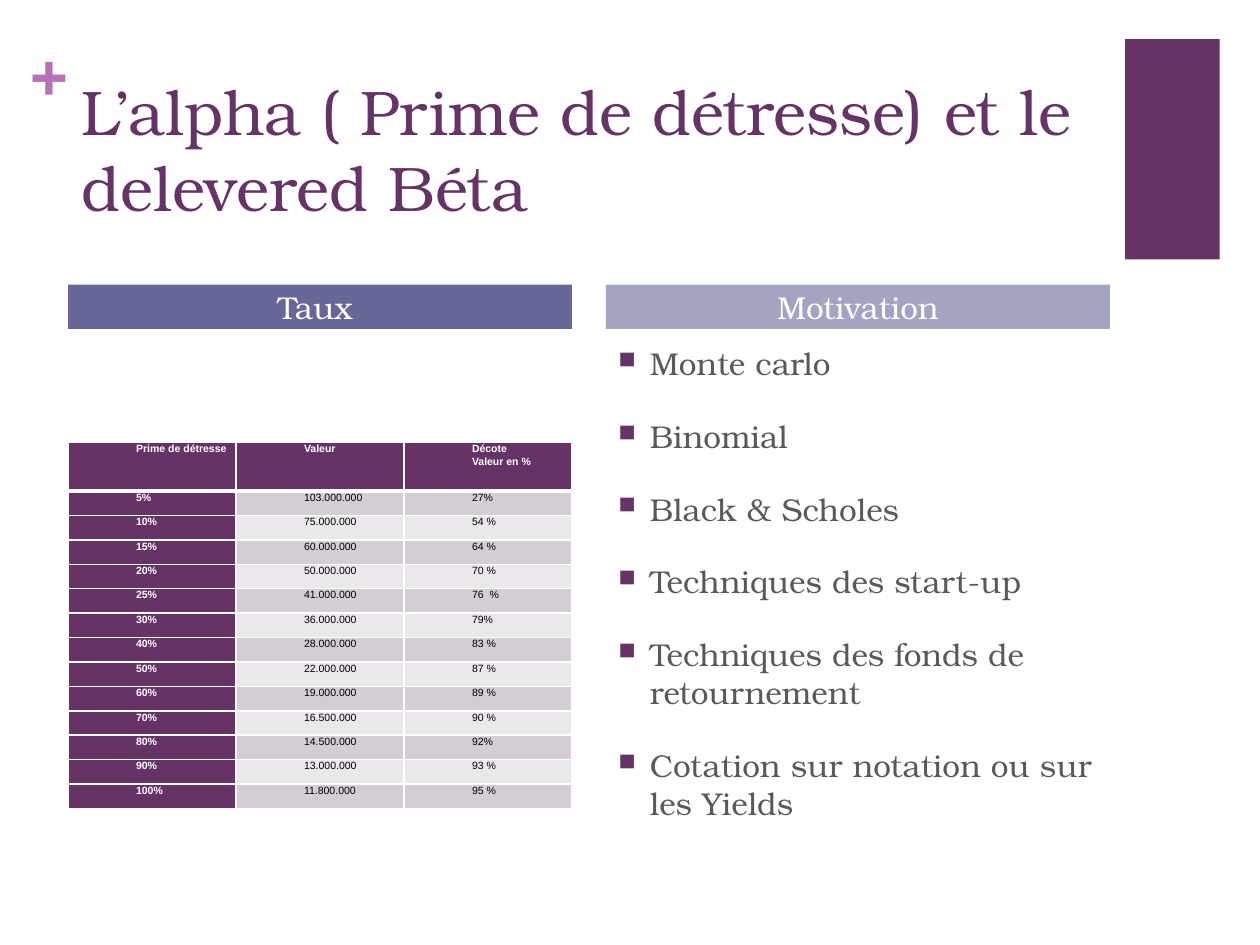
"""Build a slide that sets a table of distress premiums beside a list of valuation methods."""
from lxml.etree import SubElement
from pptx import Presentation
from pptx.dml.color import RGBColor
from pptx.enum.shapes import MSO_SHAPE
from pptx.enum.text import MSO_ANCHOR, PP_ALIGN
from pptx.oxml.ns import qn
from pptx.util import Inches, Pt

TITLE = "L’alpha ( Prime de détresse) et le delevered Béta"
HEADS = [("Taux ", "666699"), ("Motivation", "A3A3C2")]
METHODS = [
    "Monte carlo", "Binomial", "Black & Scholes", "Techniques des start-up",
    "Techniques des fonds de retournement",
    "Cotation sur notation ou sur les Yields",
]
RATES = [
    ("Prime de détresse", "Valeur", "Décote\nValeur en %"),
    ("5%", "103.000.000", "27%"),
    ("10%", "75.000.000", "54 %"),
    ("15%", "60.000.000", "64 %"),
    ("20%", "50.000.000", "70 %"),
    ("25%", "41.000.000", "76  %"),
    ("30%", "36.000.000", "79%"),
    ("40%", "28.000.000", "83 %"),
    ("50%", "22.000.000", "87 %"),
    ("60%", "19.000.000", "89 %"),
    ("70%", "16.500.000", "90 %"),
    ("80%", "14.500.000", "92%"),
    ("90%", "13.000.000", "93 %"),
    ("100%", "11.800.000", "95 %"),
]
PLUM, WHITE, BANDS = "663366", "FFFFFF", ("EAE8EA", "D3CED3")
SERIF, SANS = "TeX Gyre Bonum", "Arial"
LEFT, WIDE, GAP = 0.54, 4, 0.27
COLS = [LEFT + i * (WIDE + GAP) for i in range(2)]
HEAD_TOP, HEAD_HIGH = 2.26, 0.35
BODY_TOP, BODY_HIGH = 2.68, 4.02
TABLE_TOP, TABLE_HIGH = 3.51, 2.91


def tint(code):
    return RGBColor.from_string(code)


def write(frame, text, size=18, color=WHITE, font=SERIF, bold=False, align=PP_ALIGN.LEFT,
          before=0, line=None, indent=0, bullet=None):
    for i, words in enumerate(text.split("\n")):
        para = frame.add_paragraph() if i else frame.paragraphs[0]
        para.alignment, para.space_before = align, Pt(before)
        if line:
            para.line_spacing = line
        props = para._p.get_or_add_pPr()
        props.set("marL", str(Inches(indent)))
        props.set("indent", str(-Inches(indent) if bullet else 0))
        if bullet:
            shade = SubElement(props, qn("a:buClr"))
            SubElement(shade, qn("a:srgbClr"), val=PLUM)
            SubElement(props, qn("a:buSzPct"), val="75000")
            SubElement(props, qn("a:buChar"), char=bullet)
        run = para.add_run()
        run.text = words
        run.font.size, run.font.name, run.font.bold = Pt(size), font, bold
        run.font.color.rgb = tint(color)


def add_text(slide, box, text, inset=None, **style):
    frame = slide.shapes.add_textbox(*map(Inches, box)).text_frame
    frame.word_wrap = True
    if inset is not None:
        frame.margin_left = frame.margin_right = Inches(inset)
        frame.margin_top = frame.margin_bottom = Inches(inset)
    write(frame, text, **style)


def add_bar(slide, box, color):
    bar = slide.shapes.add_shape(MSO_SHAPE.RECTANGLE, *map(Inches, box))
    bar.shadow.inherit = False
    bar.fill.solid()
    bar.fill.fore_color.rgb = tint(color)
    bar.line.fill.background()
    return bar


def add_edges(cell, row):
    props = cell._tc.get_or_add_tcPr()
    thick = {"T": row == 1, "B": row == 0}
    for side in "LRTB":
        edge = SubElement(props, qn("a:ln" + side), w=str(Pt(3 if thick.get(side) else 1)))
        fill = SubElement(edge, qn("a:solidFill"))
        SubElement(fill, qn("a:srgbClr"), val=WHITE)


def add_rates(slide):
    count, span = len(RATES), len(RATES[0])
    box = map(Inches, (LEFT, TABLE_TOP, WIDE, TABLE_HIGH))
    table = slide.shapes.add_table(count, span, *box).table
    unit = TABLE_HIGH / (count + 1)
    for r, values in enumerate(RATES):
        table.rows[r].height = Inches(unit if r else 2 * unit)
        for c, value in enumerate(values):
            cell = table.cell(r, c)
            key = r == 0 or c == 0
            cell.margin_left = cell.margin_right = Inches(0.04)
            cell.margin_top = cell.margin_bottom = 0
            add_edges(cell, r)
            cell.fill.solid()
            cell.fill.fore_color.rgb = tint(PLUM if key else BANDS[r % 2])
            write(cell.text_frame, value, size=6, font=SANS, bold=key, line=1.07, indent=0.5,
                  color=WHITE if key else "000000", align=PP_ALIGN.JUSTIFY)


def main():
    deck = Presentation()
    deck.slide_width, deck.slide_height = Inches(10), Inches(7.5)
    slide = deck.slides.add_slide(deck.slide_layouts[6])
    add_bar(slide, (8.93, 0.31, 0.75, 1.75), PLUM)
    add_text(slide, (0.24, 0.25, 0.28, 0.61), "+", inset=0, size=36, color="B870B8", bold=True)
    add_text(slide, (0.55, 0.53, 8.26, 1.22), TITLE, size=36, color=PLUM)
    add_rates(slide)
    add_text(slide, (COLS[1], BODY_TOP, WIDE, BODY_HIGH), "\n".join(METHODS),
             color="595959", before=20, indent=0.25, bullet="■")
    for left, (label, color) in zip(COLS, HEADS):
        frame = add_bar(slide, (left, HEAD_TOP, WIDE, HEAD_HIGH), color).text_frame
        frame.margin_top = frame.margin_bottom = 0
        frame.vertical_anchor = MSO_ANCHOR.MIDDLE
        write(frame, label, align=PP_ALIGN.CENTER, before=20)
    deck.save("out.pptx")


if __name__ == "__main__":
    main()
